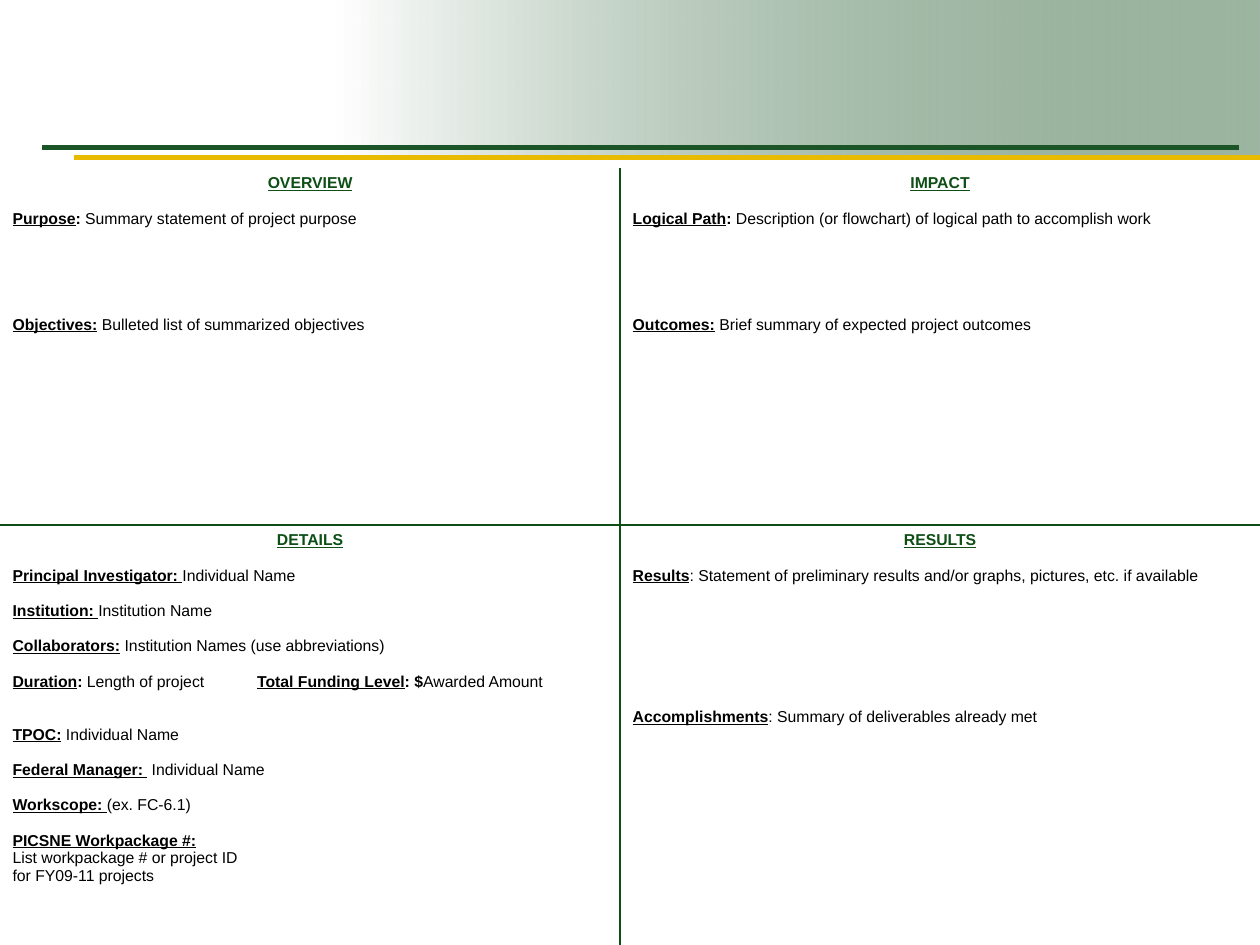
from dataclasses import dataclass

from lxml import etree
from pptx import Presentation
from pptx.dml.color import RGBColor
from pptx.enum.shapes import MSO_CONNECTOR, MSO_SHAPE
from pptx.enum.text import PP_ALIGN
from pptx.oxml.ns import qn
from pptx.util import Cm, Pt


@dataclass(frozen=True)
class Theme:
    font: str = "Arial"
    size: float = 9
    line_pitch: float = 10.1
    green: RGBColor = RGBColor(0x0D, 0x4F, 0x15)
    banner: RGBColor = RGBColor(0x1B, 0x55, 0x27)
    gold: RGBColor = RGBColor(0xE8, 0xBB, 0x00)
    black: RGBColor = RGBColor(0, 0, 0)
    white: RGBColor = RGBColor(255, 255, 255)


THEME = Theme()
WIDTH, HEIGHT = 25.4, 19.05
TABLE_TOP, SPLIT_X, SPLIT_Y = 3.39, 12.5, 10.59
TAB_POSITION = Cm(4.93)
NO_STYLE_NO_GRID = "{2D5ABB26-0587-4C30-8999-92F81FD0307C}"

HEADING = {"bold": True, "underline": True, "color": THEME.green}
LABEL = {"bold": True, "underline": True, "color": THEME.black}
STRONG = {"bold": True, "underline": False, "color": THEME.black}
PLAIN = {"bold": False, "underline": False, "color": THEME.black}

# Each entry holds the empty lines above it, then its runs.
QUADRANTS = [
    [("OVERVIEW", [
        (1, [("Purpose", LABEL), (": ", STRONG), ("Summary statement of project purpose", PLAIN)]),
        (5, [("Objectives:", LABEL), (" Bulleted list of summarized objectives", PLAIN)]),
    ]), ("IMPACT", [
        (1, [("Logical Path", LABEL), (": ", STRONG),
             ("Description (or flowchart) of logical path to accomplish work", PLAIN)]),
        (5, [("Outcomes:", LABEL), (" Brief summary of expected project outcomes", PLAIN)]),
    ])],
    [("DETAILS", [
        (1, [("Principal Investigator: ", LABEL), ("Individual Name", PLAIN)]),
        (1, [("Institution: ", LABEL), ("Institution Name", PLAIN)]),
        (1, [("Collaborators:", LABEL), (" Institution Names (use abbreviations)", PLAIN)]),
        (1, [("Duration", LABEL), (": ", STRONG), ("Length of project\t", PLAIN),
             ("Total Funding Level", LABEL), (": $", STRONG), ("Awarded Amount", PLAIN)]),
        (2, [("TPOC:", LABEL), (" Individual Name", PLAIN)]),
        (1, [("Federal Manager: ", LABEL), (" Individual Name", PLAIN)]),
        (1, [("Workscope: ", LABEL), ("(ex. FC-6.1)", PLAIN)]),
        (1, [("PICSNE Workpackage #:", LABEL),
             ("\nList workpackage # or project ID\nfor FY09-11 projects", PLAIN)]),
    ]), ("RESULTS", [
        (1, [("Results", LABEL),
             (": Statement of preliminary results and/or graphs, pictures, etc. if available", PLAIN)]),
        (7, [("Accomplishments", LABEL), (": Summary of deliverables already met", PLAIN)]),
    ])],
]


def add_banner(slide):
    shape = slide.shapes.add_shape(MSO_SHAPE.RECTANGLE, Cm(6.78), 0, Cm(18.62), Cm(3.18))
    shape.shadow.inherit = False
    shape.line.fill.background()
    shape.fill.gradient()
    shape.fill.gradient_angle = 0
    start, end = shape.fill.gradient_stops
    for stop, position, color in ((start, 0, THEME.white), (end, 1, THEME.banner)):
        stop.position = position
        stop.color.rgb = color
    color_element = list(shape.element.spPr.iter(qn("a:srgbClr")))[-1]
    etree.SubElement(color_element, qn("a:alpha"), val="43000")


def add_line(slide, start, end, color, width):
    points = [Cm(value) for value in (*start, *end)]
    connector = slide.shapes.add_connector(MSO_CONNECTOR.STRAIGHT, *points)
    connector.line.color.rgb = color
    connector.line.width = Pt(width)
    etree.SubElement(connector.element.spPr, qn("a:effectLst"))


def add_run(paragraph, text, style):
    for index, line in enumerate(text.split("\n")):
        if index:
            paragraph.add_line_break()
        if not line:
            continue
        run = paragraph.add_run()
        run.text = line
        run.font.color.rgb = style["color"]
        values = {"name": THEME.font, "size": Pt(THEME.size),
                  "bold": style["bold"], "underline": style["underline"]}
        for name, value in values.items():
            setattr(run.font, name, value)


def add_tab_stop(paragraph):
    tabs = etree.SubElement(paragraph._p.get_or_add_pPr(), qn("a:tabLst"))
    etree.SubElement(tabs, qn("a:tab"), pos=str(TAB_POSITION), algn="l")


def fill_quadrant(cell, heading, entries):
    cell.fill.background()
    title = cell.text_frame.paragraphs[0]
    title.alignment = PP_ALIGN.CENTER
    add_run(title, heading, HEADING)
    for empty_lines, runs in entries:
        paragraph = cell.text_frame.add_paragraph()
        paragraph.space_before = Pt(round(empty_lines * THEME.line_pitch, 1))
        if any("\t" in text for text, _ in runs):
            add_tab_stop(paragraph)
        for text, style in runs:
            add_run(paragraph, text, style)


def add_quadrants(slide):
    frame = slide.shapes.add_table(2, 2, 0, Cm(TABLE_TOP), Cm(WIDTH), Cm(15.7))
    table = frame.table
    table.first_row = table.horz_banding = False
    next(frame.element.iter(qn("a:tableStyleId"))).text = NO_STYLE_NO_GRID
    for column, width in zip(table.columns, (SPLIT_X, WIDTH - SPLIT_X)):
        column.width = Cm(width)
    for row, height in zip(table.rows, (SPLIT_Y - TABLE_TOP, 8.5)):
        row.height = Cm(height)
    for row, quadrants in zip(table.rows, QUADRANTS):
        for cell, (heading, entries) in zip(row.cells, quadrants):
            fill_quadrant(cell, heading, entries)


def main():
    presentation = Presentation()
    presentation.slide_width, presentation.slide_height = Cm(WIDTH), Cm(HEIGHT)
    slide = presentation.slides.add_slide(presentation.slide_layouts[6])
    add_banner(slide)
    add_line(slide, (SPLIT_X, TABLE_TOP), (SPLIT_X, HEIGHT), THEME.green, 1.25)
    add_line(slide, (0, SPLIT_Y), (WIDTH, SPLIT_Y), THEME.green, 1.25)
    add_line(slide, (1.5, 3.18), (WIDTH, 3.18), THEME.gold, 3)
    add_line(slide, (0.84, 2.97), (24.97, 2.97), THEME.banner, 3)
    add_quadrants(slide)
    presentation.save("out.pptx")


if __name__ == "__main__":
    main()
